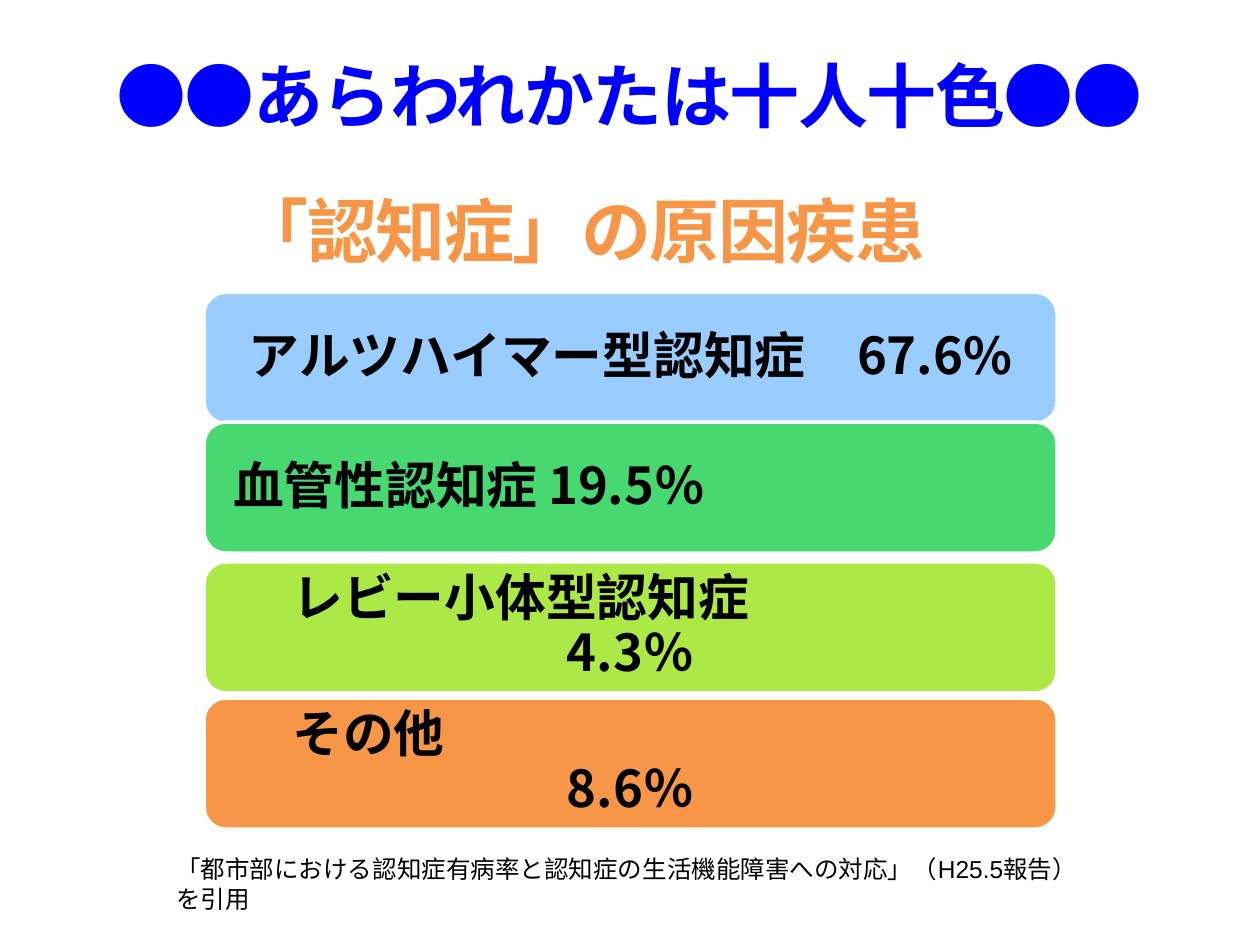
from lxml import etree
from pptx import Presentation
from pptx.dml.color import RGBColor
from pptx.enum.shapes import MSO_SHAPE
from pptx.enum.text import MSO_ANCHOR, PP_ALIGN
from pptx.oxml.ns import qn
from pptx.util import Inches, Pt

ROUND = MSO_SHAPE.ROUNDED_RECTANGLE
MIDDLE = MSO_ANCHOR.MIDDLE
LEFT, CENTER = PP_ALIGN.LEFT, PP_ALIGN.CENTER
CJK = "Noto Sans CJK JP"


def color(value):
    return RGBColor.from_string(value)


def style(para, size, tint, face=CJK, bold=True, track=0):
    for run in para.runs:
        font = run.font
        font.size = Pt(size)
        font.bold = bold
        font.name = face
        font.color.rgb = color(tint)
        props = run._r.get_or_add_rPr()
        if track:
            props.set("spc", str(track))
        etree.SubElement(props, qn("a:ea")).set("typeface", CJK)


prs = Presentation()
prs.slide_width = Inches(10)
prs.slide_height = Inches(7.5)
slide = prs.slides.add_slide(prs.slide_layouts[6])

heads = [
    ("●●あらわれかたは十人十色●●", 0.43, 0.25, 9.13, "0000FF"),
    ("「認知症」の原因疾患", 1.59, 1.32, 6.06, "F79646"),
]
for text, left, top, width, tint in heads:
    box = slide.shapes.add_textbox(Inches(left), Inches(top), Inches(width), Inches(1))
    frame = box.text_frame
    frame.word_wrap = True
    frame.vertical_anchor = MIDDLE
    frame.text = text
    para = frame.paragraphs[0]
    para.alignment = CENTER
    style(para, 40, tint, track=-80)

causes = [
    (2.32, "99CCFF", [("アルツハイマー型認知症\u300067.6%".replace("\u3000", "　"), CENTER, 0)]),
    (3.35, "47D872", [("血管性認知症\t19.5％", LEFT, 0.06)]),
    (4.46, "ACE946", [("レビー小体型認知症", LEFT, 0.53), ("4.3％", CENTER, 0)]),
    (5.54, "F79646", [("その他", LEFT, 0.53), ("8.6％", CENTER, 0)]),
]
for top, fill, lines in causes:
    bar = slide.shapes.add_shape(ROUND, Inches(1.62), Inches(top), Inches(6.77), Inches(1.04))
    bar.shadow.inherit = False
    bar.fill.solid()
    bar.fill.fore_color.rgb = color(fill)
    bar.line.color.rgb = color("FFFFFF")
    bar.line.width = Pt(2)
    frame = bar.text_frame
    frame.word_wrap = True
    frame.vertical_anchor = MIDDLE
    frame.margin_left = frame.margin_right = Inches(0.12)
    frame.margin_top = frame.margin_bottom = Inches(0.06)
    frame.text = "\n".join(text for text, align, indent in lines)
    for para, (text, align, indent) in zip(frame.paragraphs, lines):
        para.alignment = align
        para.line_spacing = 0.9
        props = para._p.get_or_add_pPr()
        props.set("marL", str(Inches(indent)))
        props.set("indent", "0")
        if "\t" in text:
            tabs = etree.SubElement(props, qn("a:tabLst"))
            etree.SubElement(tabs, qn("a:tab"), pos=str(Inches(6.35)), algn="r")
        style(para, 29, "000000")

note = slide.shapes.add_textbox(Inches(1.3), Inches(6.73), Inches(7.4), Inches(0.34))
frame = note.text_frame
frame.word_wrap = True
frame.text = "「都市部における認知症有病率と認知症の生活機能障害への対応」（H25.5報告）を引用"
style(frame.paragraphs[0], 14, "000000", face="Arial", bold=False)

prs.save("out.pptx")
